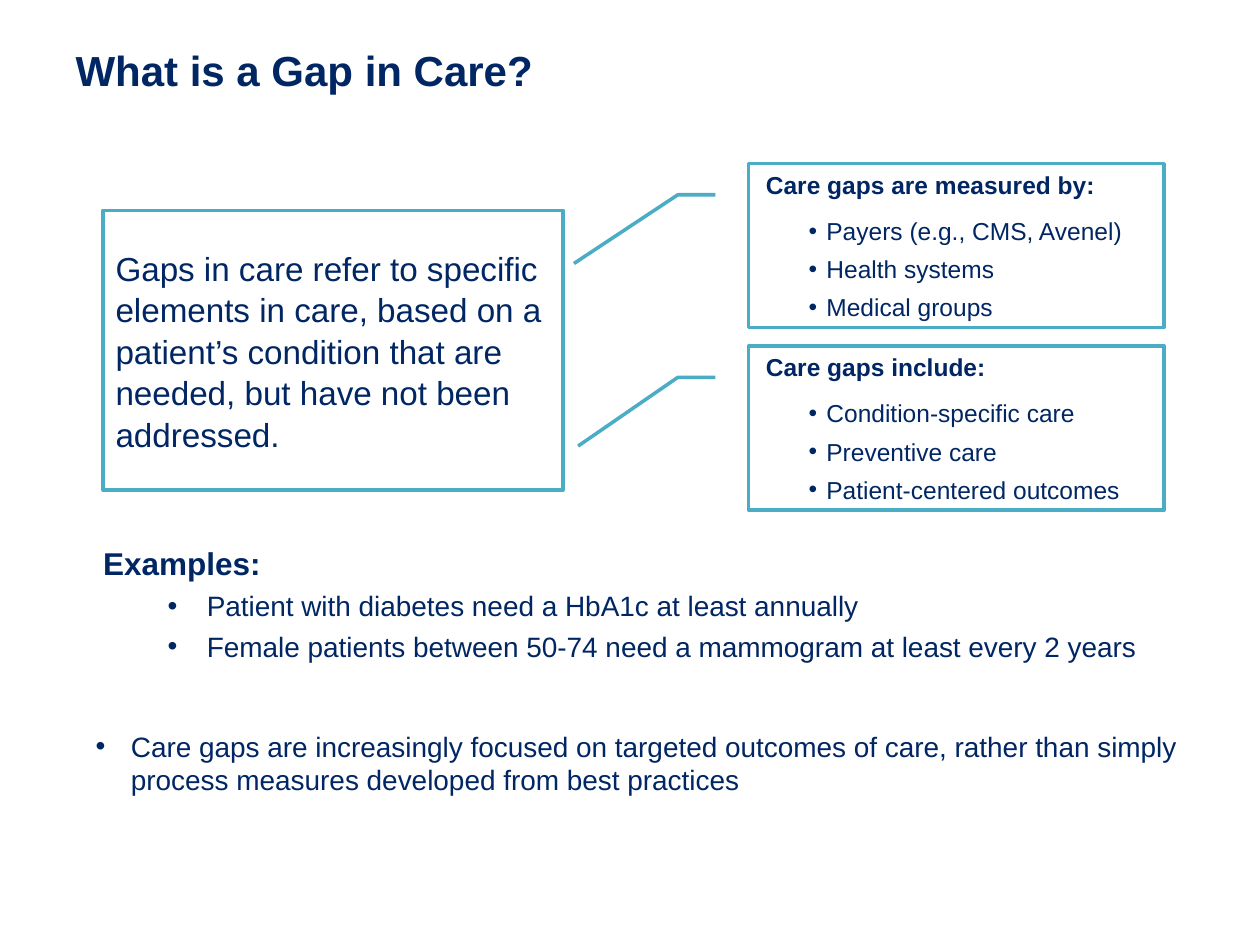
from lxml.etree import SubElement
from pptx import Presentation
from pptx.dml.color import RGBColor
from pptx.enum.shapes import MSO_SHAPE as Shape
from pptx.enum.text import MSO_ANCHOR as Anchor, PP_ALIGN as Align
from pptx.oxml.ns import qn
from pptx.util import Cm, Pt

COLORS = {"navy": "002664", "teal": "4BACC6", "white": "FFFFFF"}

CALLOUT_WIDTH, CALLOUT_HEIGHT = 8.38, 3.3
CALLOUT_LEFT, CALLOUT_TOP, CALLOUT_PITCH = 15.09, 3.3, 3.68
CALLOUTS = [
    ("Care gaps are measured by:",
     ["Payers (e.g., CMS, Avenel)", "Health systems", "Medical groups"], -0.42),
    ("Care gaps include:",
     ["Condition-specific care", "Preventive care", "Patient-centered outcomes"], -0.41),
]
EXAMPLES = [
    "Patient with diabetes need a HbA1c at least annually",
    "Female patients between 50-74 need a mammogram at least every 2 years",
]


def color(name):
    return RGBColor.from_string(COLORS[name])


def set_values(target, values):
    for name, value in values.items():
        setattr(target, name, value)


def write(paragraph, text, size, bold=False, indent=0, hanging=0, **spacing):
    """Fill a paragraph; a hanging indent also gives it a bullet."""
    paragraph.text = text
    properties = paragraph._p.get_or_add_pPr()
    properties.set("marL", str(Cm(indent)))
    properties.set("indent", str(-Cm(hanging)))
    if hanging:
        SubElement(properties, qn("a:buFont"), typeface="Arial")
        SubElement(properties, qn("a:buChar"), char="•")
    set_values(paragraph, {"alignment": Align.LEFT, **spacing})
    set_values(paragraph.font, {"name": "Arial", "size": Pt(size), "bold": bold})
    paragraph.font.color.rgb = color("navy")


def add_outlined_shape(slide, kind, box, anchor):
    shape = slide.shapes.add_shape(kind, *map(Cm, box))
    shape.shadow.inherit = False
    shape.fill.solid()
    shape.fill.fore_color.rgb = color("white")
    shape.line.color.rgb = color("teal")
    shape.line.width = Pt(2)
    set_values(shape.text_frame, {"word_wrap": True, "vertical_anchor": anchor})
    return shape


def add_title(slide, box):
    title = slide.shapes.title
    set_values(title, dict(zip(("left", "top", "width", "height"), map(Cm, box))))
    title.text_frame.vertical_anchor = Anchor.TOP
    write(title.text_frame.paragraphs[0], "What is a Gap in Care?", 24, True)


def add_definition(slide, box):
    definition = add_outlined_shape(slide, Shape.RECTANGLE, box, Anchor.MIDDLE)
    write(definition.text_frame.paragraphs[0],
          "Gaps in care refer to specific elements in care, based on a patient’s "
          "condition that are needed, but have not been addressed.",
          19, line_spacing=1.04)


def add_callout(slide, box, heading, items, pointer_x):
    callout = add_outlined_shape(slide, Shape.LINE_CALLOUT_2, box, Anchor.TOP)
    for index, value in enumerate((0.19, -0.08, 0.19, -0.17, 0.61, pointer_x)):
        callout.adjustments[index] = value
    frame = callout.text_frame
    write(frame.paragraphs[0], heading, 14, True, indent=0.1, space_after=Pt(4.5))
    for item in items:
        write(frame.add_paragraph(), item, 14, indent=1.32, hanging=0.36,
              level=1, space_before=Pt(5))


def add_examples(slide, box):
    frame = slide.shapes.add_textbox(*map(Cm, box)).text_frame
    frame.word_wrap = True
    write(frame.paragraphs[0], "Examples:", 18, True, indent=0.15)
    for example in EXAMPLES:
        write(frame.add_paragraph(), example, 16, indent=2.24, hanging=0.79,
              level=1, space_before=Pt(3.8))
    write(frame.add_paragraph(),
          "Care gaps are increasingly focused on targeted outcomes of care, rather "
          "than simply process measures developed from best practices",
          16, indent=0.71, hanging=0.71, space_before=Pt(38))


def main():
    deck = Presentation()
    set_values(deck, {"slide_width": Cm(25.4), "slide_height": Cm(19.05)})
    slide = deck.slides.add_slide(deck.slide_layouts[5])
    add_title(slide, (1.27, 0.76, 22.86, 3.18))
    add_examples(slide, (1.68, 10.85, 22.45, 5.56))
    add_definition(slide, (2.08, 4.24, 9.27, 5.64))
    for row, content in enumerate(CALLOUTS):
        top = CALLOUT_TOP + row * CALLOUT_PITCH
        add_callout(slide, (CALLOUT_LEFT, top, CALLOUT_WIDTH, CALLOUT_HEIGHT), *content)
    deck.save("out.pptx")


if __name__ == "__main__":
    main()
